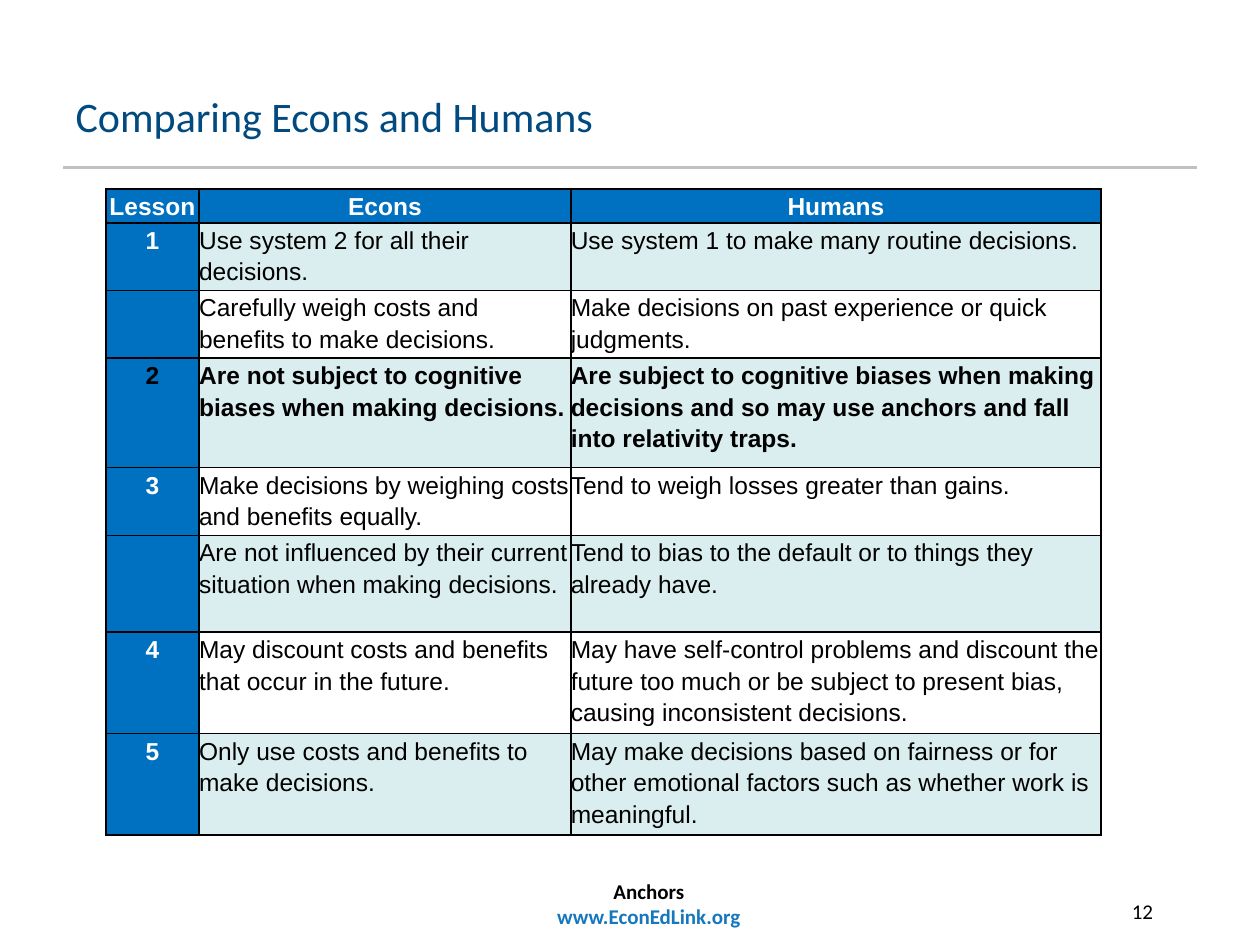
from lxml import etree
from pptx import Presentation
from pptx import util as u
from pptx.dml.color import RGBColor
from pptx.enum import shapes, text
from pptx.oxml.ns import qn

COLORS = {
    "title": "004A80", "rule": "C0C0C0", "link": "1578BC", "head": "0070C0",
    "band": "DAEDEF", "white": "FFFFFF", "black": "000000",
}
COLUMNS = [0.74, 2.95, 4.21]
ROW_HEIGHTS = [0.26, 0.52, 0.52, 0.87, 0.52, 0.77, 0.77, 0.77]
CURRENT_LESSON = "2"
ROWS = [
    ("Lesson", "Econs", "Humans"),
    ("1", "Use system 2 for all their decisions.",
     "Use system 1 to make many routine decisions."),
    ("", "Carefully weigh costs and benefits to make decisions.",
     "Make decisions on past experience or quick judgments."),
    ("2", "Are not subject to cognitive biases when making decisions.",
     "Are subject to cognitive biases when making decisions and so may use "
     "anchors and fall into relativity traps."),
    ("3", "Make decisions by weighing costs and benefits equally.",
     "Tend to weigh losses greater than gains."),
    ("", "Are not influenced by their current situation when making decisions.",
     "Tend to bias to the default or to things they already have."),
    ("4", "May discount costs and benefits that occur in the future.",
     "May have self-control problems and discount the future too much or be "
     "subject to present bias, causing inconsistent decisions."),
    ("5", "Only use costs and benefits to make decisions.",
     "May make decisions based on fairness or for other emotional factors such "
     "as whether work is meaningful."),
]


def rgb(name):
    return RGBColor.from_string(COLORS[name])


def inches(box):
    return [u.Inches(v) for v in box]


def write(p, words, size=12, font="Calibri", color="black", bold=False,
          align=text.PP_ALIGN.LEFT, spacing=None):
    p.alignment = align
    p.line_spacing = spacing
    p.font.size = u.Pt(size)
    if words:
        r = p.add_run()
        r.text = words
        r.font.size = u.Pt(size)
        r.font.name = font
        r.font.bold = bold
        r.font.color.rgb = rgb(color)


def add_title(s, box):
    sp = s.shapes.title
    sp.left, sp.top, sp.width, sp.height = inches(box)
    tf = sp.text_frame
    tf.vertical_anchor = text.MSO_ANCHOR.TOP
    write(tf.paragraphs[0], "Comparing Econs and Humans", size=24, color="title")

    left, top, width, height = box
    y = top + height - 0.01
    rule = s.shapes.add_connector(
        shapes.MSO_CONNECTOR.STRAIGHT, *inches([left, y, left + width, y]))
    rule.line.color.rgb = rgb("rule")
    rule.line.width = u.Pt(1.25)
    etree.SubElement(rule._element.spPr, qn("a:effectLst"))


def add_borders(cell):
    tcPr = cell._tc.get_or_add_tcPr()
    for i, side in enumerate(("a:lnL", "a:lnR", "a:lnT", "a:lnB")):
        ln = etree.Element(qn(side), w=str(u.Pt(1)))
        fill = etree.SubElement(ln, qn("a:solidFill"))
        etree.SubElement(fill, qn("a:srgbClr"), val=COLORS["black"])
        tcPr.insert(i, ln)


def fill_cell(cell, words, row, col, current):
    header = row == 0 or col == 0
    cell.margin_left = cell.margin_right = cell.margin_top = cell.margin_bottom = 0
    if header or row % 2:
        cell.fill.solid()
        cell.fill.fore_color.rgb = rgb("head" if header else "band")
    else:
        cell.fill.background()
    add_borders(cell)
    write(cell.text_frame.paragraphs[0], words, size=14, font="Arial",
          color="white" if header and not current else "black",
          bold=header or current, spacing=1.15,
          align=text.PP_ALIGN.CENTER if header else text.PP_ALIGN.LEFT)


def add_comparison(s, box):
    table = s.shapes.add_table(len(ROWS), len(COLUMNS), *inches(box)).table
    for column, width in zip(table.columns, COLUMNS):
        column.width = u.Inches(width)
    for i, (height, row) in enumerate(zip(ROW_HEIGHTS, ROWS)):
        table.rows[i].height = u.Inches(height)
        for j, words in enumerate(row):
            fill_cell(table.cell(i, j), words, i, j, row[0] == CURRENT_LESSON)


def add_text(s, box, lines, **fmt):
    tf = s.shapes.add_textbox(*inches(box)).text_frame
    tf.word_wrap = True
    for i, (words, color) in enumerate(lines):
        p = tf.add_paragraph() if i else tf.paragraphs[0]
        write(p, words, color=color, **fmt)


def add_footer(s, box):
    left, top, width, height = box
    add_text(s, box, [("Anchors", "black"), ("www.EconEdLink.org", "link")],
             bold=True, align=text.PP_ALIGN.CENTER)
    add_text(s, [left + width - 2.3, top + 0.16, 2.08, height],
             [("12", "black")], align=text.PP_ALIGN.RIGHT)


def main():
    prs = Presentation()
    prs.slide_width, prs.slide_height = u.Inches(10), u.Inches(7.5)
    s = prs.slides.add_slide(prs.slide_layouts[5])
    add_title(s, [0.5, 0.67, 9, 0.67])
    add_footer(s, [0.83, 6.92, 8.64, 0.5])
    add_comparison(s, [0.84, 1.5, sum(COLUMNS), sum(ROW_HEIGHTS)])
    prs.save("out.pptx")


if __name__ == "__main__":
    main()
